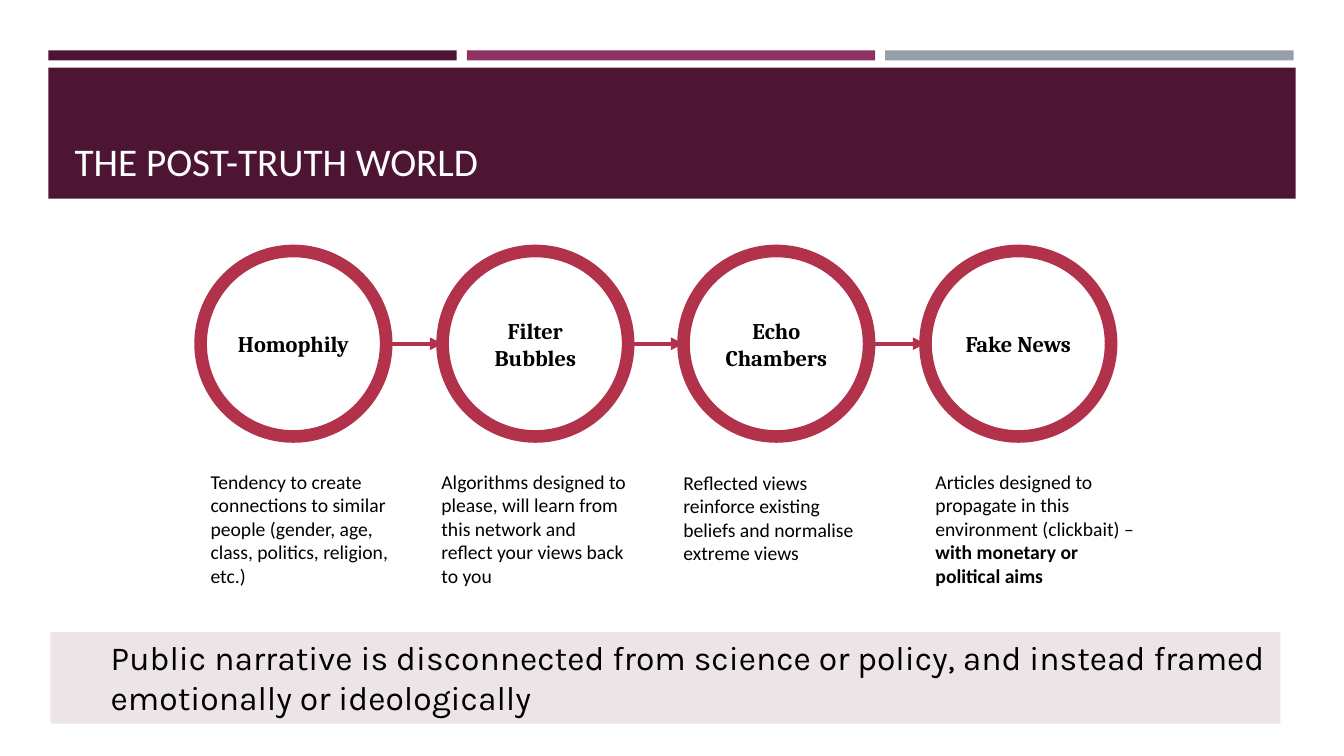
from lxml import etree
from pptx import Presentation
from pptx.dml.color import RGBColor
from pptx.enum.shapes import MSO_CONNECTOR, MSO_SHAPE
from pptx.enum.text import MSO_ANCHOR, PP_ALIGN
from pptx.oxml.ns import qn
from pptx.util import Pt

RECT, OVAL = MSO_SHAPE.RECTANGLE, MSO_SHAPE.OVAL
STRAIGHT = MSO_CONNECTOR.STRAIGHT
LEFT, CENTER = PP_ALIGN.LEFT, PP_ALIGN.CENTER
TOP, MIDDLE, BOTTOM = MSO_ANCHOR.TOP, MSO_ANCHOR.MIDDLE, MSO_ANCHOR.BOTTOM

PLUM = RGBColor(0x4D, 0x14, 0x34)
MAGENTA = RGBColor(0x90, 0x31, 0x63)
GREY = RGBColor(0x96, 0x9F, 0xA7)
CRIMSON = RGBColor(0xB2, 0x32, 0x4B)
MULBERRY = RGBColor(0x6C, 0x25, 0x4A)
BLACK = RGBColor(0, 0, 0)
WHITE = RGBColor(0xFF, 0xFF, 0xFF)

PX = 9144  # EMU per px, 100 px to the inch

# Stage name, its explanation as (text, bold) runs, and the explanation's box
STAGES = [
    ("Homophily",
     [("Tendency to create connections to similar people "
       "(gender, age, class, politics, religion, etc.)", False)],
     (199, 461, 206, 128)),
    ("Filter Bubbles",
     [("Algorithms designed to please, will learn from this network "
       "and reflect your views back to you", False)],
     (428, 461, 206, 128)),
    ("Echo Chambers",
     [("Reflected views reinforce existing beliefs and normalise "
       "extreme views", False)],
     (668, 462, 206, 104)),
    ("Fake News",
     [("Articles designed to propagate in this environment (clickbait) – ",
       False),
      ("with monetary or political aims", True)],
     (918, 461, 218, 128)),
]


def emu(*lengths):
    return [length * PX for length in lengths]


def add_plain_shape(slide, kind, box, fill=None):
    shape = slide.shapes.add_shape(kind, *emu(*box))
    shape.shadow.inherit = False
    shape.line.fill.background()
    if fill is None:
        shape.fill.background()
    else:
        shape.fill.solid()
        shape.fill.fore_color.rgb = fill
    return shape


def write(shape, runs, font, size, color=BLACK, align=LEFT, anchor=TOP):
    frame = shape.text_frame
    frame.word_wrap = True
    frame.vertical_anchor = anchor
    paragraph = frame.paragraphs[0]
    paragraph.alignment = align
    paragraph.font.name = font
    paragraph.font.size = Pt(size)
    paragraph.font.color.rgb = color
    for text, bold in runs:
        run = paragraph.add_run()
        run.text = text
        run.font.bold = bold
    return paragraph


def add_header(slide, left, top, width, height):
    # Three thin bars above the title band
    gap, bar_height = 10, 10
    bar_width = (width - 2 * gap) // 3
    for i, color in enumerate((PLUM, MAGENTA, GREY)):
        add_plain_shape(slide, RECT, (left + i * (bar_width + gap), top,
                                      bar_width, bar_height), color)
    band_top = top + 17
    band_height = height - 17
    add_plain_shape(slide, RECT, (left, band_top, width, band_height), PLUM)

    # Title, brought in front of its band
    title = slide.shapes.title
    title.left, title.top, title.width, title.height = emu(
        left + 16, band_top + 10, width - 31, band_height - 19)
    write(title, [("THE POST-TRUTH WORLD", False)], "Calibri", 28, WHITE,
          anchor=BOTTOM)
    slide.shapes._spTree.append(title._element)


def add_arrow(slide, start, end, y):
    arrow = slide.shapes.add_connector(STRAIGHT, *emu(start, y, end, y))
    arrow.line.color.rgb = CRIMSON
    arrow.line.width = Pt(3)
    etree.SubElement(arrow.line._get_or_add_ln(), qn("a:tailEnd"),
                     type="triangle")
    etree.SubElement(arrow._element.spPr, qn("a:effectLst"))


def add_chain(slide, left, top, width, diameter):
    step = (width - diameter) / (len(STAGES) - 1)
    for i, (name, explanation, box) in enumerate(STAGES):
        x = round(left + i * step)
        ring = add_plain_shape(slide, OVAL, (x, top, diameter, diameter))
        ring.line.color.rgb = CRIMSON
        ring.line.width = Pt(9)
        ring.text_frame.margin_left = ring.text_frame.margin_right = 0
        write(ring, [(name, True)], "Cambria", 16, align=CENTER, anchor=MIDDLE)
        if i:
            add_arrow(slide, round(x - step + diameter), x,
                      top + diameter // 2)
        note = slide.shapes.add_textbox(*emu(*box))
        write(note, explanation, "Calibri", 14)


def add_conclusion(slide, *box):
    banner = add_plain_shape(slide, RECT, box, MULBERRY)
    tint = banner._element.spPr.find(qn("a:solidFill"))[0]
    etree.SubElement(tint, qn("a:alpha"), val="12000")
    paragraph = write(
        banner, [("Public narrative is disconnected from science or policy, "
                  "and instead framed emotionally or ideologically", False)],
        "Karla", 24)
    paragraph.level = 1
    indent = paragraph._p.get_or_add_pPr()
    indent.set("marL", str(50 * PX))
    indent.set("indent", "0")


def main():
    prs = Presentation()
    prs.slide_width, prs.slide_height = emu(1333, 750)
    slide = prs.slides.add_slide(prs.slide_layouts[5])  # Title Only
    add_header(slide, 48, 50, 1237, 147)
    add_chain(slide, 199, 249, 903, 184)
    add_conclusion(slide, 50, 627, 1220, 91)
    prs.save("out.pptx")


if __name__ == "__main__":
    main()
